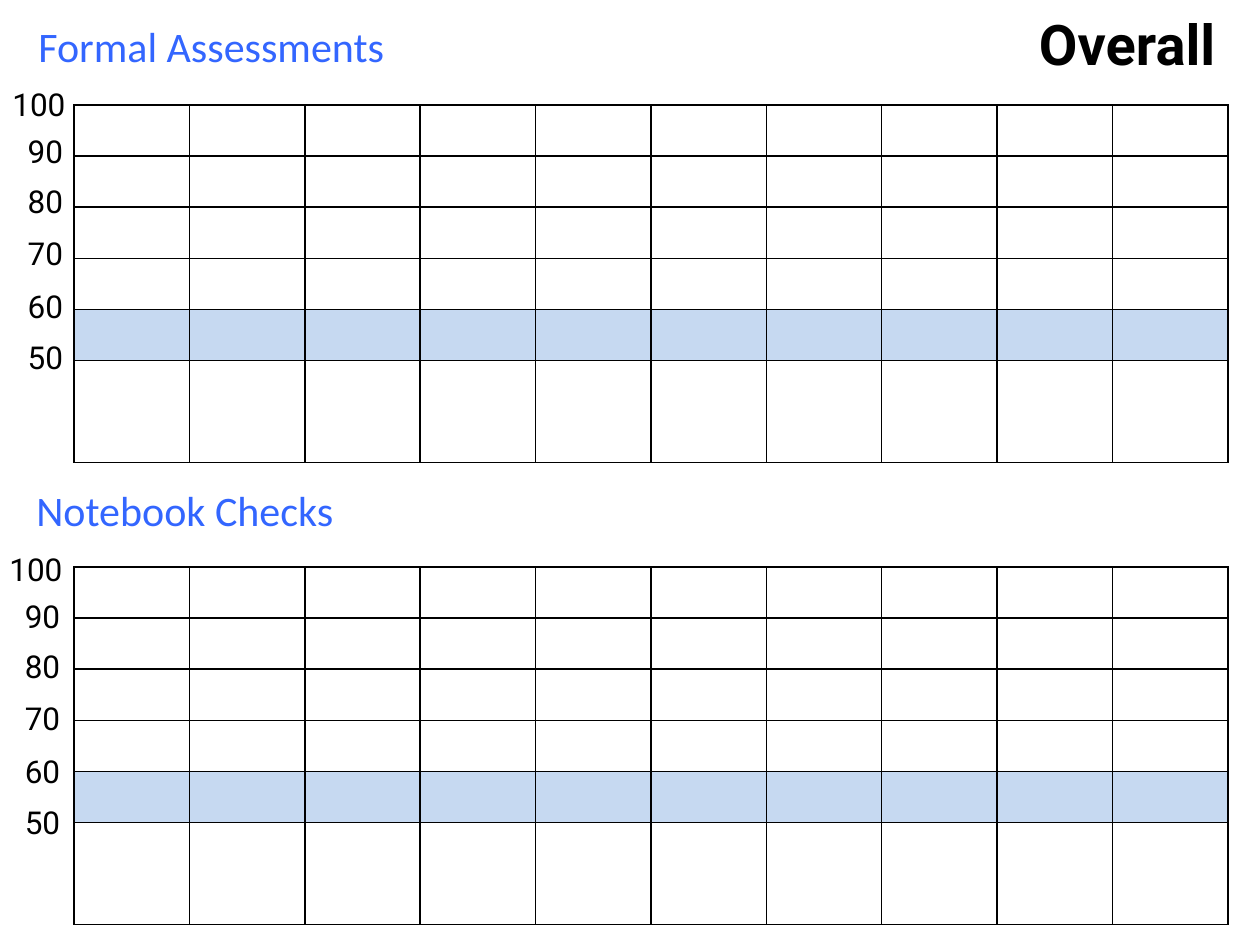
from lxml import etree
from pptx import Presentation
from pptx import util as u
from pptx.dml.color import RGBColor
from pptx.enum import text
from pptx.oxml import ns

SCALE = 914400 // 126
BLACK, BLUE, BAND = "000000", "3366FF", "C6D9F1"
COLUMNS, ROWS, BAND_ROW = 10, 7, 4
GRID_LEFT, GRID_WIDTH, GRID_HEIGHT = 74, 1154, 358
SCORES = [("100", 0), ("90", 47), ("80", 97), ("70", 149), ("60", 202), ("50", 253)]
PANELS = [
    {"heading": "Formal Assessments", "heading_at": (26, 14), "grid_top": 105, "scores_at": (0, 79)},
    {"heading": "Notebook Checks", "heading_at": (24, 478), "grid_top": 567, "scores_at": (-3, 544)},
]


def px(value):
    return u.Emu(value * SCALE)


def color(value):
    return RGBColor.from_string(value)


def write(shape, content, *, at, size, font="Roboto", fill=BLACK, bold=False,
          align=text.PP_ALIGN.LEFT):
    shape.left, shape.top, shape.width, shape.height = map(px, at)
    frame = shape.text_frame
    frame.word_wrap = True
    frame.auto_size = text.MSO_AUTO_SIZE.SHAPE_TO_FIT_TEXT
    frame.vertical_anchor = text.MSO_ANCHOR.TOP
    paragraph = frame.paragraphs[0]
    paragraph.alignment = align
    run = paragraph.add_run()
    run.text = content
    run.font.name, run.font.size, run.font.bold = font, u.Pt(size), bold
    run.font.color.rgb = color(fill)


def add_text(slide, content, **style):
    write(slide.shapes.add_textbox(0, 0, 0, 0), content, **style)


def set_borders(cell, hidden):
    properties = cell._tc.get_or_add_tcPr()
    for index, side in enumerate("LRTB"):
        line = etree.Element(ns.qn(f"a:ln{side}"), w=str(u.Pt(1)))
        if side == hidden:
            etree.SubElement(line, ns.qn("a:noFill"))
        else:
            solid = etree.SubElement(line, ns.qn("a:solidFill"))
            etree.SubElement(solid, ns.qn("a:srgbClr"), val=BLACK)
        properties.insert(index, line)


def add_grid(slide, top):
    table = slide.shapes.add_table(
        ROWS, COLUMNS, px(GRID_LEFT), px(top), px(GRID_WIDTH), px(GRID_HEIGHT)).table
    table.first_row = table.horz_banding = False
    hidden_sides = {ROWS - 2: "B", ROWS - 1: "T"}
    for column in table.columns:
        column.width = px(GRID_WIDTH) // COLUMNS
    for number, row in enumerate(table.rows):
        row.height = px(GRID_HEIGHT) // ROWS
        for cell in row.cells:
            if number == BAND_ROW:
                cell.fill.solid()
                cell.fill.fore_color.rgb = color(BAND)
            else:
                cell.fill.background()
            set_borders(cell, hidden_sides.get(number))


def add_panel(slide, panel):
    add_text(slide, panel["heading"], at=(*panel["heading_at"], 571, 63),
             size=24, font="Calibri", fill=BLUE)
    add_grid(slide, panel["grid_top"])
    left, top = panel["scores_at"]
    for score, offset in SCORES:
        align = text.PP_ALIGN.LEFT if score == "100" else text.PP_ALIGN.CENTER
        add_text(slide, score, at=(left, top + offset, 91, 50), size=18, align=align)


def main():
    presentation = Presentation()
    presentation.slide_width, presentation.slide_height = px(1260), px(945)
    slide = presentation.slides.add_slide(presentation.slide_layouts[5])
    write(slide.shapes.title, "Overall", at=(738, 3, 490, 81), size=32, bold=True,
          align=text.PP_ALIGN.RIGHT)
    for panel in PANELS:
        add_panel(slide, panel)
    presentation.save("out.pptx")


if __name__ == "__main__":
    main()
